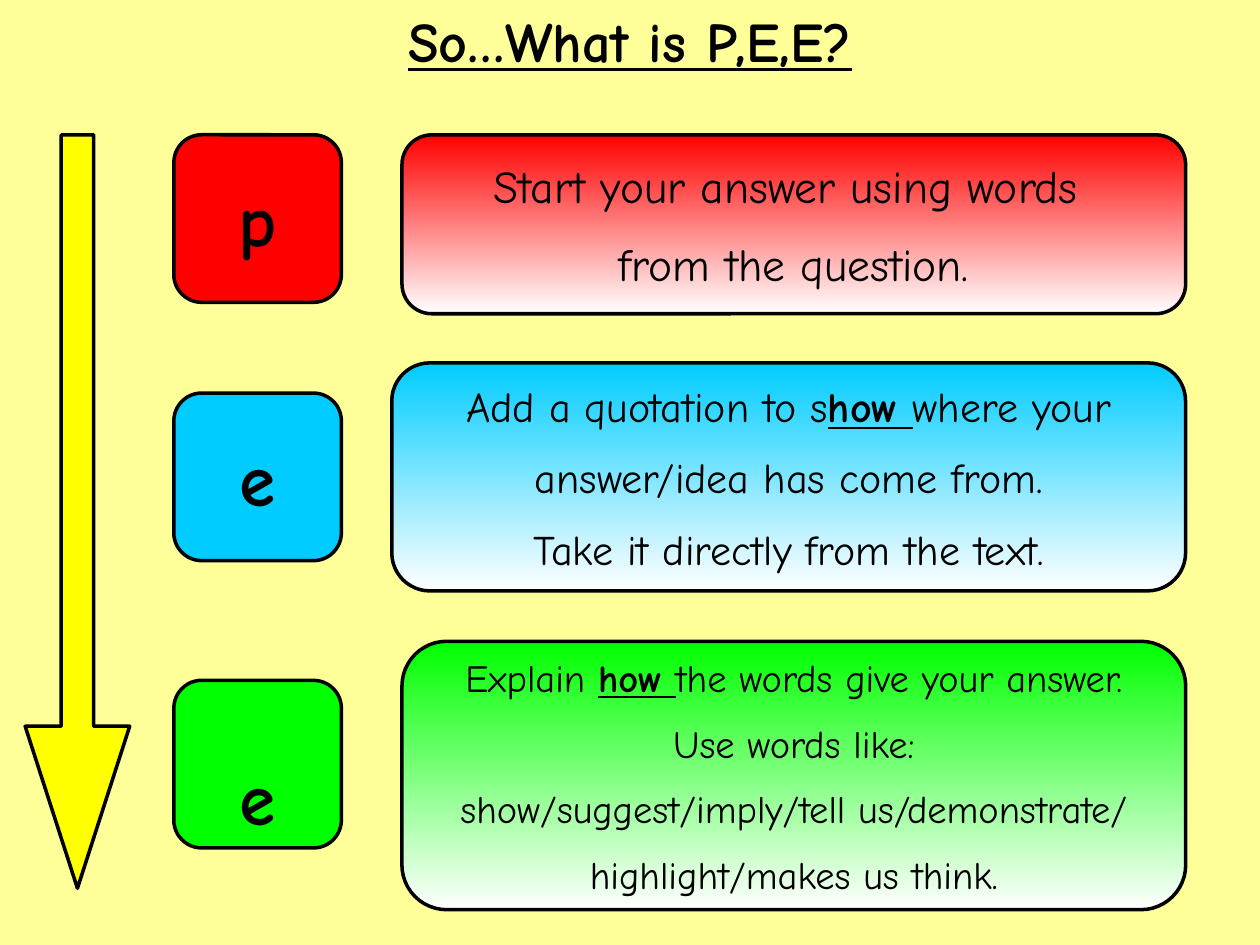
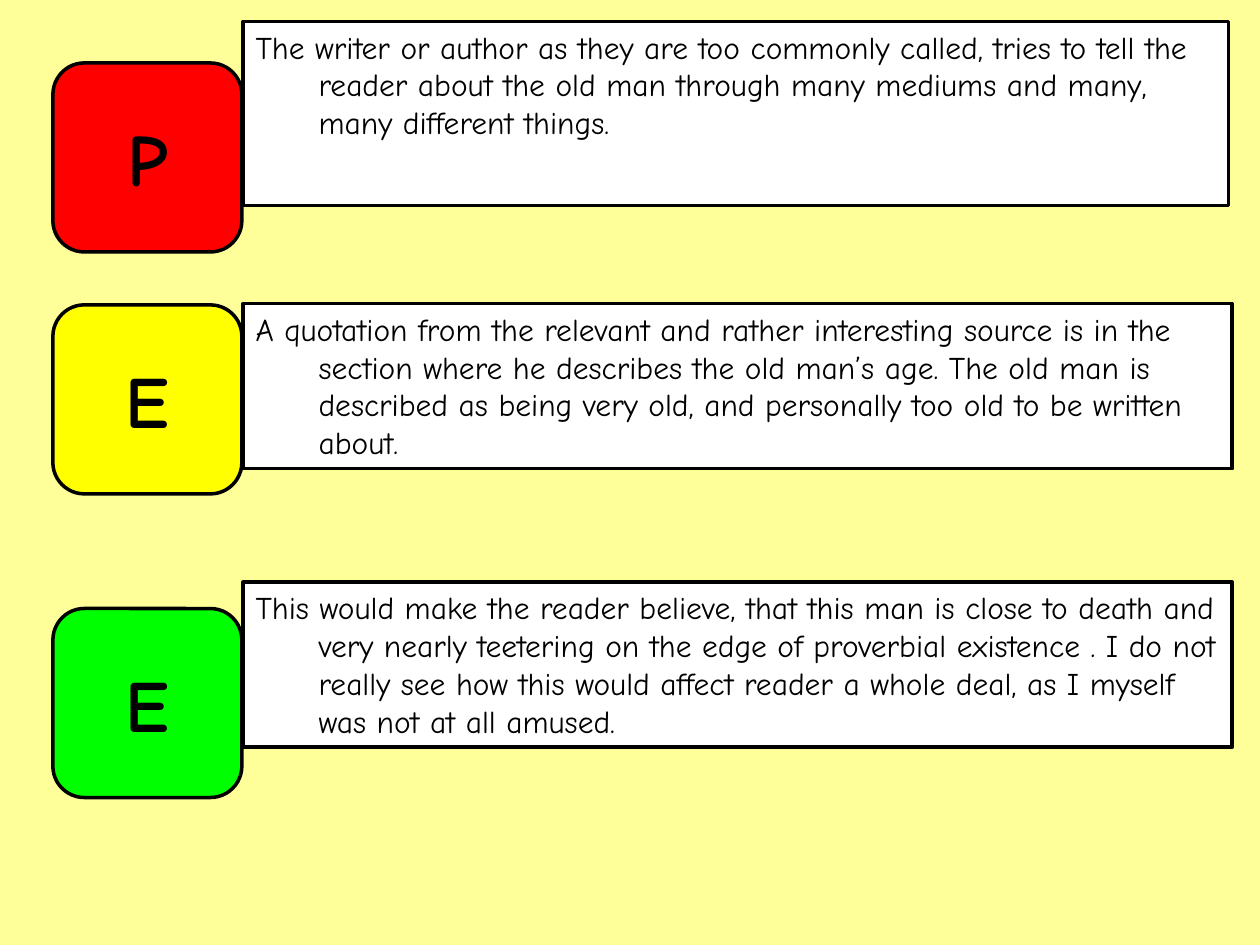
import pptx
import pptx.util
import pptx.dml.color
import pptx.enum.shapes
import pptx.enum.text
import pptx.oxml.ns
from dataclasses import dataclass
from lxml import etree

COLUMNS, ROWS = 100, 75
SHAPES = pptx.enum.shapes.MSO_SHAPE
ALIGN = pptx.enum.text.PP_ALIGN
ANCHOR = pptx.enum.text.MSO_ANCHOR


@dataclass(frozen=True)
class Theme:
    font: str = "Comic Neue"
    page: str = "FFFF99"
    ink: str = "000000"
    paper: str = "FFFFFF"
    red: str = "FF0000"
    blue: str = "00CCFF"
    green: str = "00FF00"
    yellow: str = "FFFF00"
    title_size: int = 32
    letter_size: int = 42
    example_size: int = 18
    outline: int = 2
    corner: float = 1 / 6


THEME = Theme()


def rgb(colour):
    return pptx.dml.color.RGBColor.from_string(colour)


def place(deck, left, top, width, height):
    column, row = deck.slide_width / COLUMNS, deck.slide_height / ROWS
    return [round(n * unit) for n, unit in
            ((left, column), (top, row), (width, column), (height, row))]


def add_page(deck):
    page = deck.slides.add_slide(deck.slide_layouts[6])
    page.background.fill.solid()
    page.background.fill.fore_color.rgb = rgb(THEME.page)
    return page


def style_run(run, size, bold=False, underline=False):
    run.font.name = THEME.font
    run.font.size = pptx.util.Pt(size)
    run.font.bold = bold
    run.font.underline = underline
    run.font.color.rgb = rgb(THEME.ink)


def space_half_line(paragraph):
    properties = paragraph._p.get_or_add_pPr()
    before = etree.SubElement(properties, pptx.oxml.ns.qn("a:spcBef"))
    etree.SubElement(before, pptx.oxml.ns.qn("a:spcPct"), val="50000")


def write(frame, lines, size, align, bold=False, underline=False, spaced=True, stress=None):
    frame.text = "\n".join(lines)
    for paragraph in frame.paragraphs:
        paragraph.alignment = align
        if spaced:
            space_half_line(paragraph)
        if stress and stress in paragraph.text:
            before, after = paragraph.text.split(stress)
            paragraph.runs[0].text = before
            paragraph.add_run().text = stress
            paragraph.add_run().text = after
        for run in paragraph.runs:
            stressed = run.text == stress
            style_run(run, size, bold or stressed, underline or stressed)


def add_outlined(page, kind, area, colour, adjustments=(), fade=False):
    figure = page.shapes.add_shape(kind, *area)
    figure.shadow.inherit = False
    for index, value in enumerate(adjustments):
        figure.adjustments[index] = value
    if fade:
        figure.fill.gradient()
        figure.fill.gradient_angle = 270
        for stop, shade in zip(figure.fill.gradient_stops, (colour, THEME.paper)):
            stop.color.rgb = rgb(shade)
    else:
        figure.fill.solid()
        figure.fill.fore_color.rgb = rgb(colour)
    figure.line.color.rgb = rgb(THEME.ink)
    figure.line.width = pptx.util.Pt(THEME.outline)
    return figure


def add_title(page, area, wording):
    frame = page.shapes.add_textbox(*area).text_frame
    frame.word_wrap = True
    write(frame, [wording], THEME.title_size, ALIGN.CENTER, bold=True, underline=True)


def add_letter(page, area, letter, colour, lowered=False):
    frame = add_outlined(page, SHAPES.ROUNDED_RECTANGLE, area, colour, [THEME.corner]).text_frame
    frame.word_wrap = False
    frame.vertical_anchor = ANCHOR.BOTTOM if lowered else ANCHOR.MIDDLE
    if lowered:
        frame.margin_bottom = 0
    write(frame, [letter], THEME.letter_size, ALIGN.CENTER, bold=True, spaced=False)


def add_advice(page, area, lines, size, colour, stress=None):
    frame = add_outlined(page, SHAPES.ROUNDED_RECTANGLE, area, colour,
                         [THEME.corner], fade=True).text_frame
    frame.word_wrap = False
    frame.vertical_anchor = ANCHOR.MIDDLE
    write(frame, lines, size, ALIGN.CENTER, stress=stress)


def add_example(page, area, wording):
    frame = add_outlined(page, SHAPES.RECTANGLE, area, THEME.paper).text_frame
    frame.word_wrap = True
    frame.vertical_anchor = ANCHOR.TOP
    write(frame, [wording], THEME.example_size, ALIGN.LEFT)
    hanging = pptx.util.Inches(0.5)
    properties = frame.paragraphs[0]._p.get_or_add_pPr()
    properties.set("marL", str(hanging))
    properties.set("indent", str(-hanging))


def build_method(deck):
    page = add_page(deck)
    first_row, letter_left, letter_side, advice_right = 10.7, 13.8, 13.3, 94.1
    add_title(page, place(deck, 0, 0, COLUMNS, 6.3), "So…What is P,E,E?")
    steps = (
        ("p", THEME.red, first_row, 31.9, first_row, 14.2, 26,
         ["Start your answer using words ", "from the question."]),
        ("e", THEME.blue, 31.2, 31.1, 28.8, 18.1, 24,
         ["Add a quotation to show where your", "answer/idea has come from.",
          "Take it directly from the text."]),
        ("e", THEME.green, 54, 31.9, 50.9, 21.3, 22,
         ["Explain how the words give your answer.", "Use words like:",
          "show/suggest/imply/tell us/demonstrate/", "highlight/makes us think."]),
    )
    for letter, colour, letter_top, left, top, height, size, lines in steps:
        add_letter(page, place(deck, letter_left, letter_top, letter_side, letter_side),
                   letter, colour, lowered=colour == THEME.green)
        add_advice(page, place(deck, left, top, advice_right - left, height),
                   lines, size, colour, stress="how ")
    add_outlined(page, SHAPES.DOWN_ARROW, place(deck, 2, first_row, 8.3, 59.8),
                 THEME.yellow, [0.31, 1.55])


def build_example(deck):
    page = add_page(deck)
    letter_left, letter_side, example_left = 4.2, 15, 19.3
    parts = (
        ("P", THEME.red, 5, 1.7, 78.2, 14.6,
         "The writer or author as they are too commonly called, tries to tell the reader "
         "about the old man through many mediums and many, many different things."),
        ("E", THEME.yellow, 24.2, 24.1, 78.5, 13.1,
         "A quotation from the relevant and rather interesting source is in the section "
         "where he describes the old man’s age. The old man is described as being very old, "
         "and personally too old to be written about."),
        ("E", THEME.green, 48.3, 46.2, 78.5, 13.1,
         "This would make the reader believe, that this man is close to death and very nearly "
         "teetering on the edge of proverbial existence . I do not really see how this would "
         "affect reader a whole deal, as I myself was not at all amused."),
    )
    for letter, colour, letter_top, top, width, height, wording in parts:
        add_example(page, place(deck, example_left, top, width, height), wording)
        add_letter(page, place(deck, letter_left, letter_top, letter_side, letter_side),
                   letter, colour)


def main():
    deck = pptx.Presentation()
    deck.slide_width = pptx.util.Inches(10)
    deck.slide_height = pptx.util.Inches(7.5)
    build_method(deck)
    build_example(deck)
    deck.save("out.pptx")


if __name__ == "__main__":
    main()
